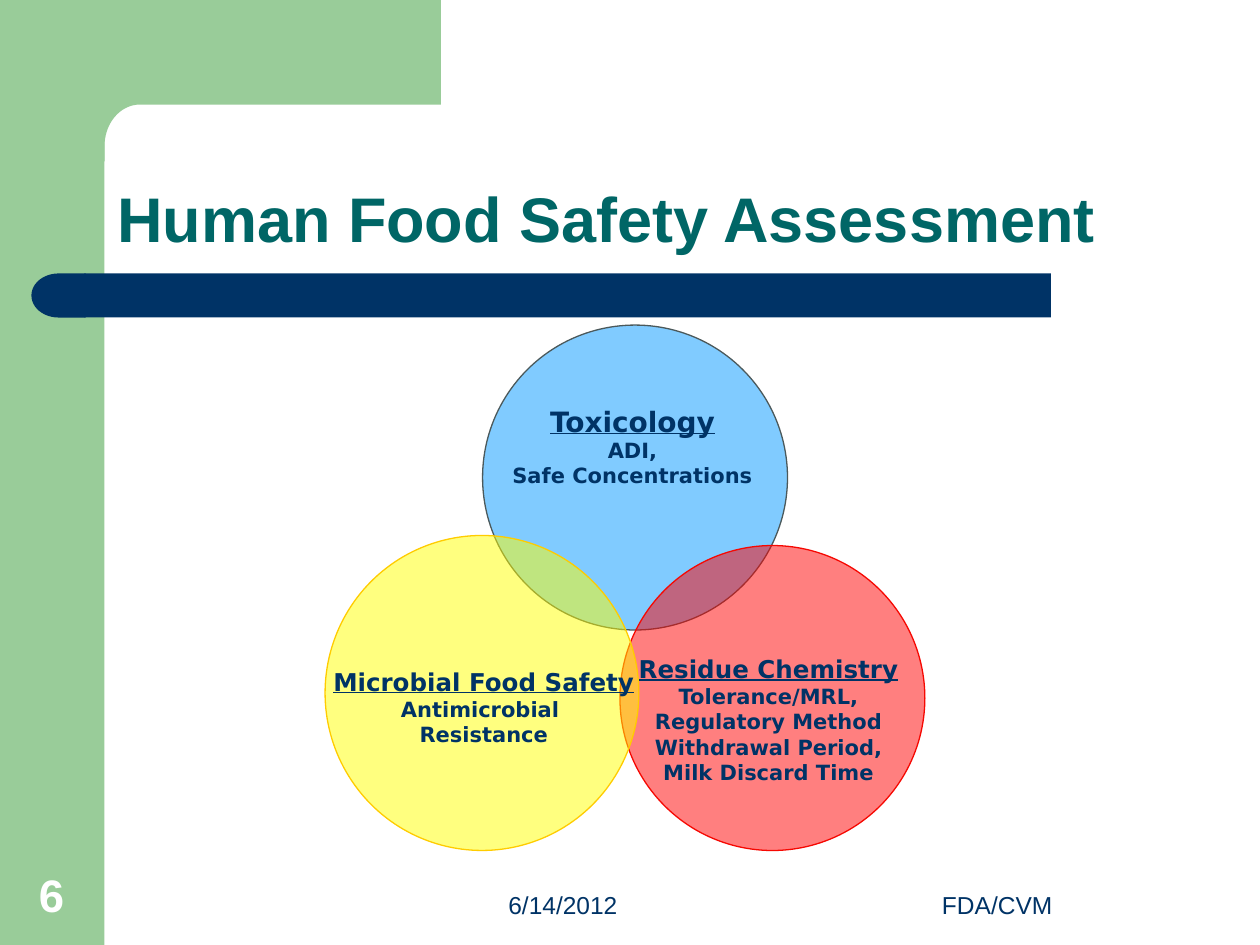
import math

from lxml import etree
from pptx import Presentation
from pptx.dml.color import RGBColor
from pptx.enum.shapes import MSO_SHAPE
from pptx.enum.text import MSO_ANCHOR, PP_ALIGN
from pptx.oxml.ns import qn
from pptx.util import Inches, Pt

RECT, OVAL, DELAY = MSO_SHAPE.RECTANGLE, MSO_SHAPE.OVAL, MSO_SHAPE.FLOWCHART_DELAY
LEFT, CENTER, RIGHT = PP_ALIGN.LEFT, PP_ALIGN.CENTER, PP_ALIGN.RIGHT
MIDDLE, BOTTOM = MSO_ANCHOR.MIDDLE, MSO_ANCHOR.BOTTOM

GREEN = RGBColor(0x99, 0xCC, 0x99)
NAVY = RGBColor(0x00, 0x33, 0x66)
TEAL = RGBColor(0x00, 0x66, 0x66)
WHITE = RGBColor(0xFF, 0xFF, 0xFF)
BLUE = RGBColor(0x03, 0x99, 0xFF)
SLATE = RGBColor(0x4B, 0x59, 0x5B)
RED = RGBColor(0xFF, 0x00, 0x00)
RED_LINE = RGBColor(0xF6, 0x08, 0x02)
YELLOW = RGBColor(0xFF, 0xFF, 0x00)
GOLD = RGBColor(0xFF, 0xCC, 0x00)

# circle box, fill, line, label box, heading size, heading, details
CIRCLES = [
    ((3.83, 2.58, 2.42, 2.42), BLUE, SLATE, (3.77, 3.33, 2.5, 0.42), 16,
     "Toxicology", ["ADI,", "Safe Concentrations"]),
    ((4.92, 4.33, 2.42, 2.42), RED, RED_LINE, (4.85, 5.5, 2.5, 0.42), 14,
     "Residue Chemistry", ["Tolerance/MRL,", "Regulatory Method",
                           "Withdrawal Period,", "Milk Discard Time"]),
    ((2.58, 4.25, 2.49, 2.5), YELLOW, GOLD, (2.59, 5.4, 2.5, 0.42), 14,
     "Microbial Food Safety", ["Antimicrobial ", "Resistance"]),
]
# box, text, alignment, format
FOOTERS = [
    ((2.67, 6.83, 2.33, 0.52), "6/14/2012", RIGHT, {"size": Pt(14)}),
    ((6.33, 6.83, 3.17, 0.52), "FDA/CVM", CENTER, {"size": Pt(14)}),
    ((0.09, 6.83, 0.64, 0.53), "6", CENTER, {"size": Pt(26), "bold": True, "color": WHITE}),
]


def inches(values):
    return [Inches(v) for v in values]


def add_run(p, text, color=NAVY, name="Arial", **fmt):
    r = p.add_run()
    r.text = text
    r.font.color.rgb = color
    for key, value in {"name": name, **fmt}.items():
        setattr(r.font, key, value)


def paint(sp, fill, line=None):
    sp.shadow.inherit = False
    sp.fill.solid()
    sp.fill.fore_color.rgb = fill
    if line is None:
        sp.line.fill.background()
    else:
        sp.line.color.rgb = line
        sp.line.width = Pt(0.75)


def add_shape(s, kind, box, fill, line=None):
    sp = s.shapes.add_shape(kind, *inches(box))
    paint(sp, fill, line)
    return sp


def set_alpha(sp, percent):
    color = sp.fill._xPr.find(qn("a:solidFill"))[0]
    etree.SubElement(color, qn("a:alpha"), val=str(percent * 1000))


def add_corner(s):
    """Green block at the top whose inner corner is a quarter ellipse."""
    cx, cy, rx, ry = 1.11, 1.16, 0.28, 0.33
    angles = [math.radians(a) for a in range(0, 91, 5)]
    arc = [(cx - rx * math.sin(a), cy - ry * math.cos(a)) for a in angles]
    points = [(3.5, 0.83), *arc, (0.83, 1.28), (0.5, 1.28), (0.5, 0)]
    builder = s.shapes.build_freeform(Inches(3.5), 0)
    builder.add_line_segments([inches(point) for point in points], close=True)
    paint(builder.convert_to_shape(), GREEN)


def add_frame(s):
    add_shape(s, RECT, (0, 0, 0.83, 7.5), GREEN)
    add_corner(s)
    add_shape(s, RECT, (0.67, 2.17, 7.67, 0.35), NAVY)
    cap = add_shape(s, DELAY, (0.25, 2.17, 0.43, 0.35), NAVY)
    cap._element.spPr.xfrm.set("flipH", "1")


def add_title(s, text):
    title = s.shapes.title
    title.left, title.top, title.width, title.height = inches((0.83, 0.83, 8.67, 1.25))
    tf = title.text_frame
    tf.vertical_anchor = BOTTOM
    p = tf.paragraphs[0]
    p.alignment = LEFT
    p.line_spacing = 0.9
    add_run(p, text, TEAL, size=Pt(36), bold=True)


def add_footer(s, box, text, align, fmt):
    tf = s.shapes.add_textbox(*inches(box)).text_frame
    tf.word_wrap = True
    tf.vertical_anchor = BOTTOM
    p = tf.paragraphs[0]
    p.alignment = align
    add_run(p, text, **fmt)


def add_label(s, box, heading_size, heading, details):
    tf = s.shapes.add_textbox(*inches(box)).text_frame
    tf.word_wrap = True
    tf.vertical_anchor = MIDDLE
    for side in ("left", "top", "right", "bottom"):
        setattr(tf, f"margin_{side}", 0)
    for i, text in enumerate([heading, *details]):
        p = tf.add_paragraph() if i else tf.paragraphs[0]
        p.alignment = CENTER
        add_run(p, text, name="DejaVu Sans", bold=True, underline=i == 0,
                size=Pt(12 if i else heading_size))


def main():
    prs = Presentation()
    prs.slide_width, prs.slide_height = Inches(10), Inches(7.5)
    s = prs.slides.add_slide(prs.slide_layouts[5])
    add_frame(s)
    add_title(s, "Human Food Safety Assessment")
    for footer in FOOTERS:
        add_footer(s, *footer)
    for box, fill, line, *label in CIRCLES:
        set_alpha(add_shape(s, OVAL, box, fill, line), 50)
        add_label(s, *label)
    prs.save("out.pptx")


if __name__ == "__main__":
    main()
